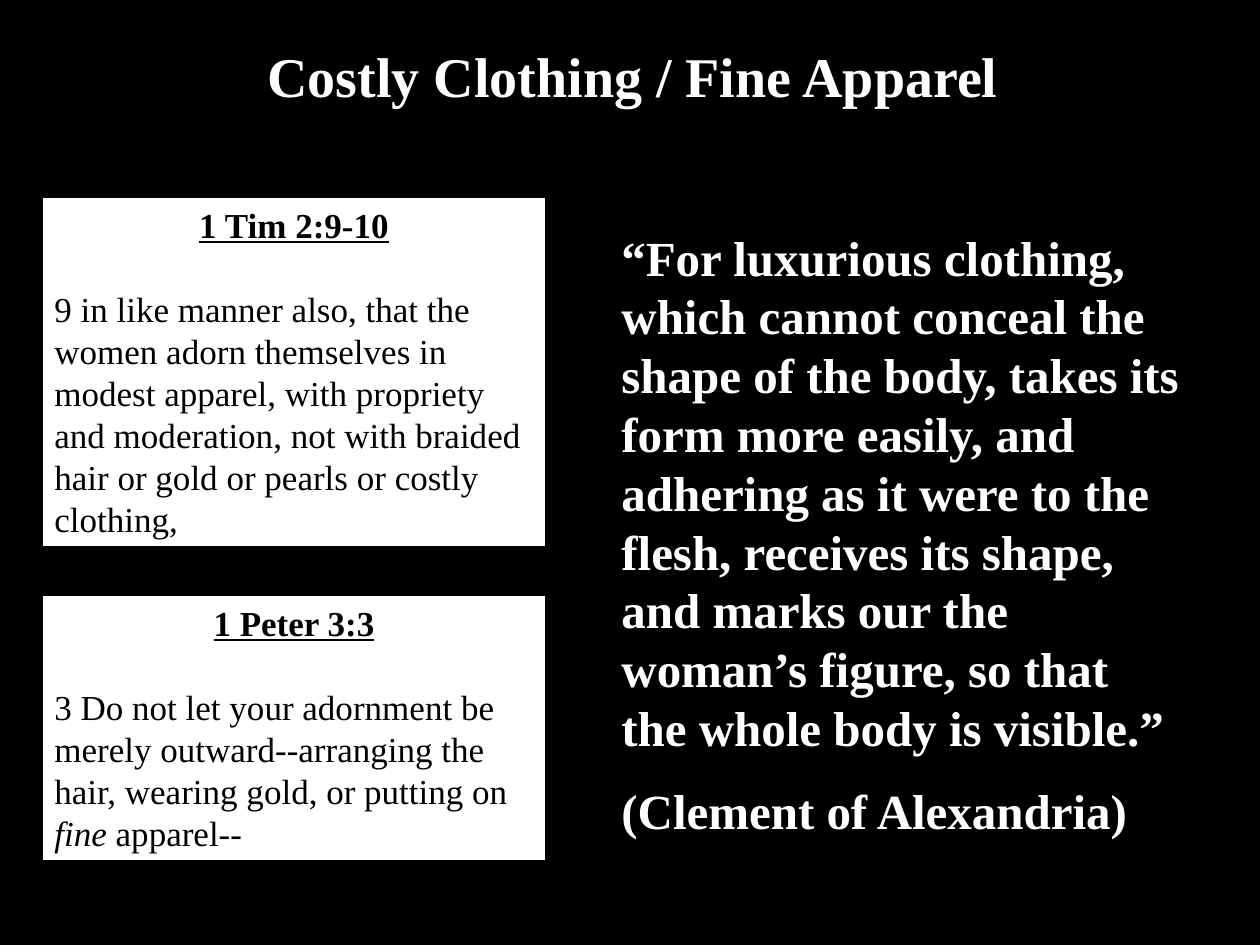
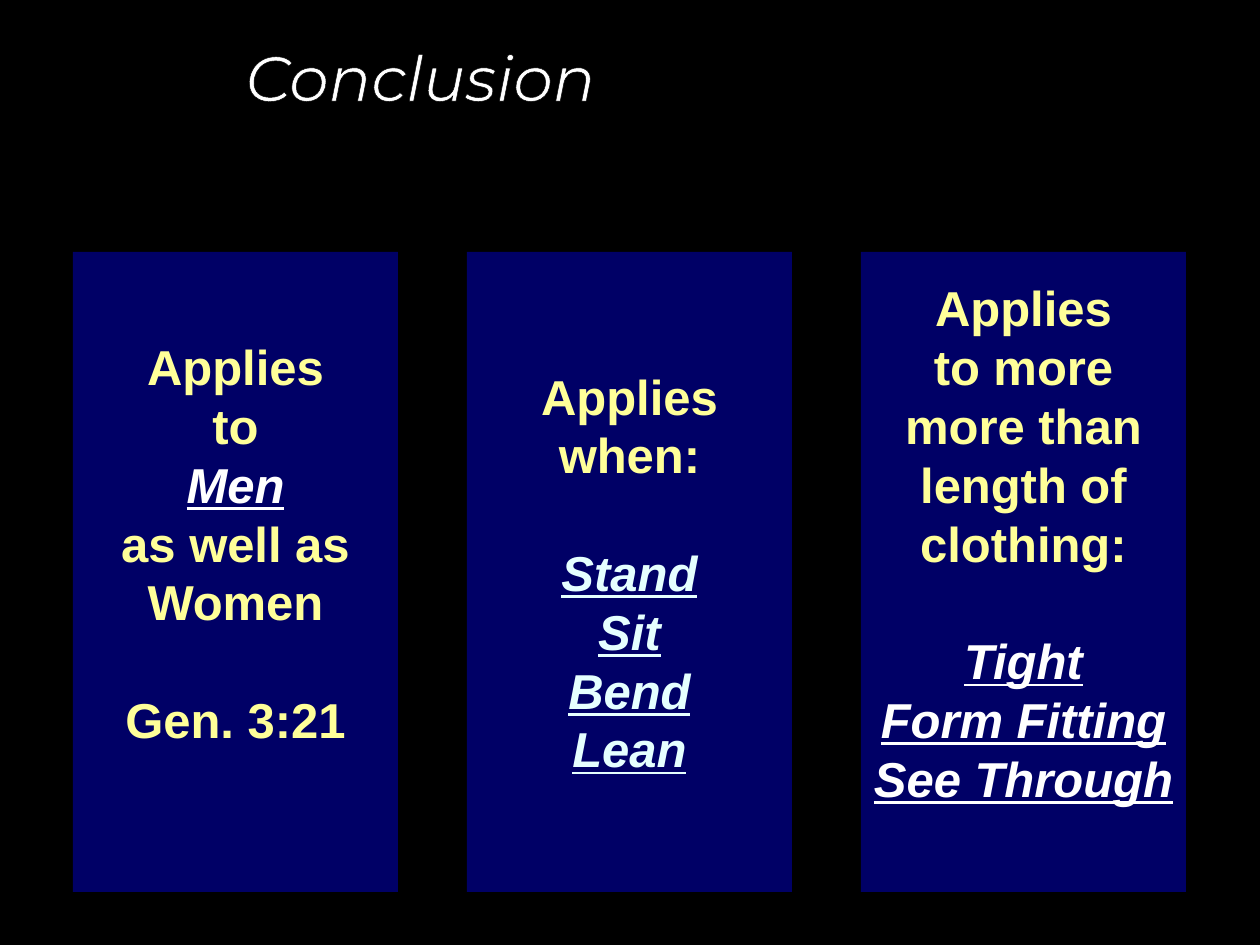
import pptx
import pptx.util
import pptx.dml.color
import pptx.enum.shapes
import pptx.enum.text
import lxml.etree

HUES = {
    "black": "000000",
    "white": "FFFFFF",
    "navy": "000066",
    "cream": "FFFF99",
    "ice": "E5FFFF",
}
SERIF = "Times New Roman"
LEAD = 1.2
MID = pptx.enum.text.PP_ALIGN.CENTER
LEFT = pptx.enum.text.PP_ALIGN.LEFT
GROW = pptx.enum.text.MSO_AUTO_SIZE.SHAPE_TO_FIT_TEXT
RECT = pptx.enum.shapes.MSO_SHAPE.RECTANGLE
Pt = pptx.util.Pt
rgb = pptx.dml.color.RGBColor.from_string


def place(page, spot, fill=None):
    spot = [round(n * 914400 / 126) for n in spot]
    if fill is None:
        return page.shapes.add_textbox(*spot)
    box = page.shapes.add_shape(RECT, *spot)
    box.shadow.inherit = False
    box.fill.solid()
    box.fill.fore_color.rgb = rgb(HUES[fill])
    box.line.fill.background()
    return box


def write(box, rows, font, size, wrap=True):
    frame = box.text_frame
    frame.word_wrap = wrap
    for i, (align, gap, parts) in enumerate(rows):
        para = frame.paragraphs[0] if i == 0 else frame.add_paragraph()
        para.alignment = align
        para.line_spacing = Pt(size * LEAD)
        para.space_before = Pt(gap)
        for text, hue, marks in parts:
            run = para.add_run()
            run.text = text
            run.font.name = font
            run.font.size = Pt(size)
            run.font.color.rgb = rgb(HUES[hue])
            run.font.bold = "b" in marks
            run.font.italic = "i" in marks
            run.font.underline = "u" in marks


deck = pptx.Presentation()
deck.slide_width = pptx.util.Inches(10)
deck.slide_height = pptx.util.Inches(7.5)
pages = []
for n in range(2):
    page = deck.slides.add_slide(deck.slide_layouts[6])
    page.background.fill.solid()
    page.background.fill.fore_color.rgb = rgb(HUES["black"])
    pages.append(page)
cloth, close = pages

verses = [
    (197, 350, "1 Tim 2:9-10", [
        ("9 in like manner also, that the women adorn themselves in modest apparel, "
         "with propriety and moderation, not with braided hair or gold or pearls or "
         "costly clothing,", "black", ""),
    ]),
    (595, 266, "1 Peter 3:3", [
        ("3 Do not let your adornment be merely outward--arranging the hair, "
         "wearing gold, or putting on ", "black", ""),
        ("fine", "black", "i"),
        (" apparel--", "black", ""),
    ]),
]
for top, high, head, body in verses:
    box = place(cloth, (42, top, 504, high), "white")
    box.text_frame.vertical_anchor = pptx.enum.text.MSO_ANCHOR.TOP
    box.line.color.rgb = rgb(HUES["black"])
    box.line.width = Pt(0.75)
    rows = [(MID, 0, [(head, "black", "bu")]), (LEFT, 20 * LEAD, body)]
    write(box, rows, SERIF, 20)
    box.text_frame.auto_size = GROW

title = place(cloth, (253, 35, 760, 79))
write(title, [(MID, 0, [("Costly Clothing / Fine Apparel", "white", "b")])], SERIF, 32, False)
title.text_frame.auto_size = GROW

quote = place(cloth, (609, 221, 588, 631))
lines = [
    "“For luxurious clothing, which cannot conceal the shape of the body, takes its "
    "form more easily, and adhering as it were to the flesh, receives its shape, and "
    "marks our the woman’s figure, so that the whole body is visible.”",
    "(Clement of Alexandria)",
]
rows = [(LEFT, 14 * i, [(text, "white", "b")]) for i, text in enumerate(lines)]
write(quote, rows, SERIF, 28)
quote.text_frame.auto_size = GROW

title = place(close, (42, 32, 757, 180))
write(title, [(MID, 0, [("Conclusion", "white", "i")])], "Montserrat", 36, False)
props = title.text_frame.paragraphs[0].runs[0].font._element
space = "{http://schemas.openxmlformats.org/drawingml/2006/main}"
edge = lxml.etree.Element(space + "ln", w="9525")
paint = lxml.etree.SubElement(edge, space + "solidFill")
lxml.etree.SubElement(paint, space + "srgbClr", val=HUES["black"])
props.insert(0, edge)

cards = [
    (["Applies", "to", "Men", "as well as", "Women", "Gen. 3:21"],
     ["Men"], "white", "Gen. 3:21", True),
    (["Applies", "when:", "Stand", "Sit", "Bend", "Lean"],
     ["Stand", "Sit", "Bend", "Lean"], "ice", "Stand", False),
    (["Applies", "to more", "more than", "length of", "clothing:",
      "Tight", "Form Fitting", "See Through"],
     ["Tight", "Form Fitting", "See Through"], "white", "Tight", True),
]
for i, (lines, keys, hue, after, lift) in enumerate(cards):
    box = place(close, (73 + 394 * i, 252, 325, 640), "navy")
    box.text_frame.vertical_anchor = pptx.enum.text.MSO_ANCHOR.MIDDLE
    if lift:
        box.text_frame.margin_bottom = Pt(3.6 + 28 * LEAD)
    rows = []
    for text in lines:
        part = (text, hue, "biu") if text in keys else (text, "cream", "b")
        rows.append((MID, 28 * LEAD if text == after else 0, [part]))
    write(box, rows, "Arial", 28, False)

deck.save("out.pptx")
